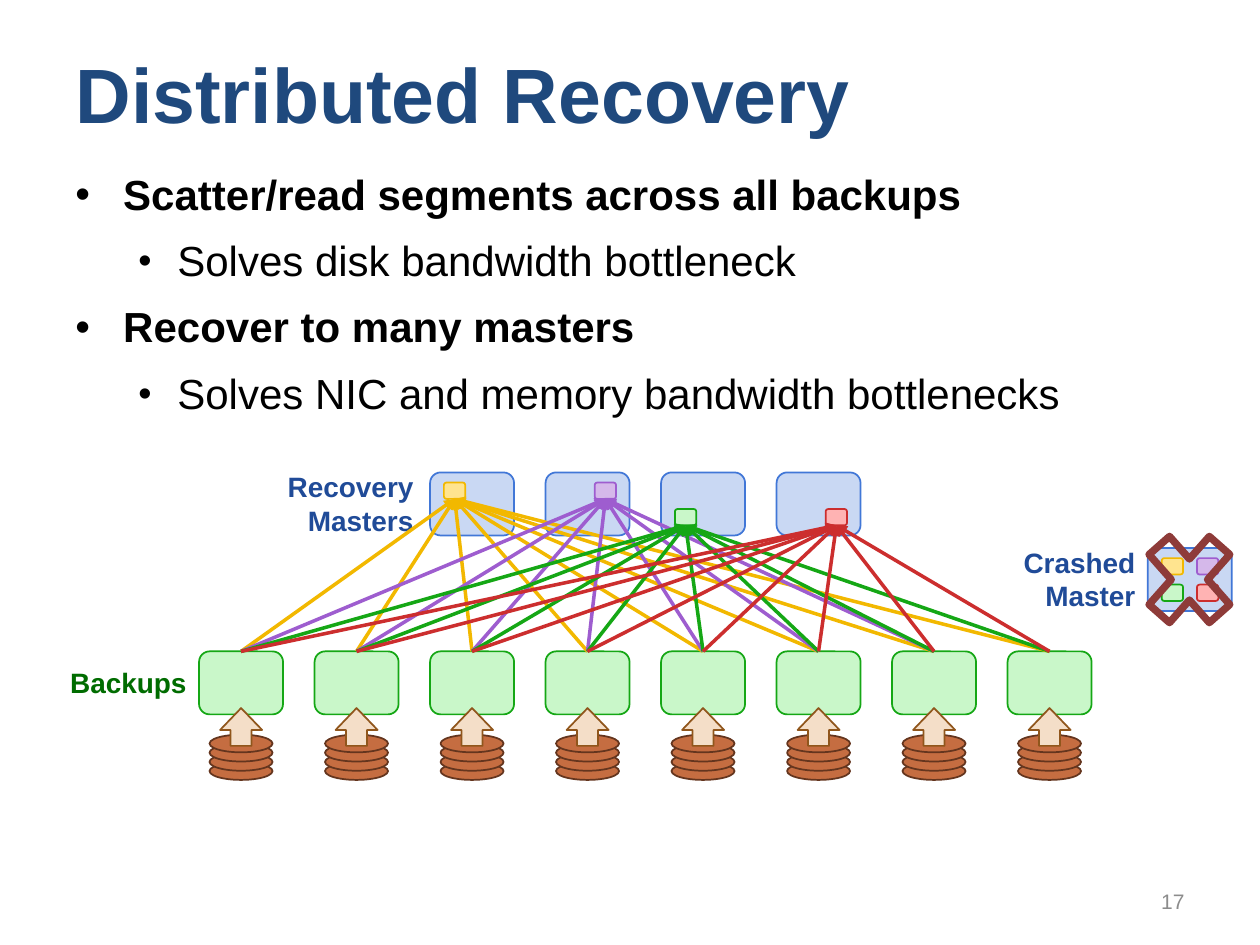
from pptx import Presentation
from pptx.dml.color import RGBColor
from pptx.enum.shapes import MSO_CONNECTOR, MSO_SHAPE
from pptx.enum.text import MSO_ANCHOR, MSO_AUTO_SIZE, PP_ALIGN
from pptx.oxml.ns import qn
from pptx.util import Inches, Pt
from lxml import etree

ROUND, OVAL = MSO_SHAPE.ROUNDED_RECTANGLE, MSO_SHAPE.OVAL
ARROW, CROSS = MSO_SHAPE.UP_ARROW, MSO_SHAPE.MATH_MULTIPLY
LEFT, RIGHT = PP_ALIGN.LEFT, PP_ALIGN.RIGHT
TOP, MIDDLE = MSO_ANCHOR.TOP, MSO_ANCHOR.MIDDLE

COL = 11 / 12                # pitch of the node grid
GRID_X = 1.58                # left edge of the first column
NODE_W, NODE_H = 2 / 3, 0.5
MASTER_Y, BACKUP_Y = 3.75, 5.17
BACKUPS = 8
TILE_W, TILE_H = 0.17, 0.13
BLUE = ("C9D8F3", "4177D7")
GREEN = ("C9F7C9", "15A715")
DISK = ("C56D41", "64351E")
READ = ("F4DEC8", "90561C")
NAVY = "204B98"
# fill, line, left and top inside a node, backups that send to it
TILES = [
    ("FFE48F", "F2B800", 0.11, 0.08, 8),
    ("D5B8EA", "9E5DCF", 0.39, 0.08, 7),
    (*GREEN, 0.11, 0.29, 8),
    ("FFB3B3", "CC2E2E", 0.39, 0.29, 8),
]
POINTS = [
    (0, "Scatter/read segments across all backups"),
    (1, "Solves disk bandwidth bottleneck"),
    (0, "Recover to many masters"),
    (1, "Solves NIC and memory bandwidth bottlenecks"),
]


def rgb(code):
    return RGBColor.from_string(code)


def col_x(i):
    return GRID_X + i * COL


def style(para, size, color, bold=False, align=LEFT):
    para.alignment = align
    for run in para.runs:
        font = run.font
        font.name, font.size, font.bold = "Arial", Pt(size), bold
        font.color.rgb = rgb(color)


def add_shape(home, kind, box, fill, line, width=1):
    shape = home.shapes.add_shape(kind, *map(Inches, box))
    shape.shadow.inherit = False
    if fill:
        shape.fill.solid()
        shape.fill.fore_color.rgb = rgb(fill)
    else:
        shape.fill.background()
    shape.line.color.rgb = rgb(line)
    shape.line.width = Pt(width)
    return shape


def add_text(home, box, text, size, color, bold=True, anchor=TOP, wrap=False):
    frame = home.shapes.add_textbox(*map(Inches, box)).text_frame
    frame.text = text
    frame.word_wrap = wrap
    frame.vertical_anchor = anchor
    if not wrap:
        frame.auto_size = MSO_AUTO_SIZE.SHAPE_TO_FIT_TEXT
    style(frame.paragraphs[0], size, color, bold, RIGHT)


def add_arrow(home, start, end, color):
    line = home.shapes.add_connector(
        MSO_CONNECTOR.STRAIGHT, *map(Inches, (*start, *end)))
    line.line.color.rgb = rgb(color)
    line.line.width = Pt(2)
    props = line.line._get_or_add_ln()
    etree.SubElement(props, qn("a:tailEnd"), type="triangle")
    etree.SubElement(props.getparent(), qn("a:effectLst"))


def add_title(slide, box, text):
    title = slide.shapes.title
    title.left, title.top, title.width, title.height = map(Inches, box)
    title.text_frame.text = text
    title.text_frame.vertical_anchor = MIDDLE
    style(title.text_frame.paragraphs[0], 44, "1F497D", True)


def add_points(slide, box):
    frame = slide.shapes.add_textbox(*map(Inches, box)).text_frame
    frame.word_wrap = True
    for i, (level, text) in enumerate(POINTS):
        para = frame.add_paragraph() if i else frame.paragraphs[0]
        para.text, para.level = text, level
        para.line_spacing = 0.9
        para.space_before = para.space_after = Pt(6)
        style(para, 24, "000000", level == 0)
        left, hang = ((0.38, 0.38), (0.81, 0.31))[level]
        props = para._p.get_or_add_pPr()
        props.set("marL", str(Inches(left)))
        props.set("indent", str(-Inches(hang)))
        etree.SubElement(props, qn("a:buSzPct"),
                         val=("100000", "90000")[level])
        etree.SubElement(props, qn("a:buFont"), typeface="Arial")
        etree.SubElement(props, qn("a:buChar"), char="•")


def add_node(home, x, y, tiles):
    """Place a master with its partition tiles."""
    add_shape(home, ROUND, (x, y, NODE_W, NODE_H), *BLUE)
    for fill, line, dx, dy, _ in tiles:
        add_shape(home, ROUND, (x + dx, y + dy, TILE_W, TILE_H), fill, line)


def add_backup(slide, x, y):
    """Place a backup with its disk stack and read arrow."""
    group = slide.shapes.add_group_shape()
    for k in range(4):
        add_shape(group, OVAL, (x + NODE_W / 8, y + 0.88 - k * 0.073,
                                NODE_W * 3 / 4, 0.14), *DISK)
    add_shape(group, ROUND, (x, y, NODE_W, NODE_H), *GREEN)
    arrow = add_shape(group, ARROW, (x + NODE_W / 4, y + 0.45,
                                     NODE_W / 2, 0.3), *READ)
    arrow.adjustments[0], arrow.adjustments[1] = 0.5, 0.58


def add_flows(slide, first):
    """Join the backups to the tile of each master, from column first on."""
    group = slide.shapes.add_group_shape()
    for i, (_, color, dx, dy, count) in enumerate(TILES):
        end = (col_x(first + i) + dx + TILE_W / 2, MASTER_Y + dy + TILE_H)
        for k in range(count):
            add_arrow(group, (col_x(k) + NODE_W / 2, BACKUP_Y), end, color)


def add_crash(slide, x, y):
    group = slide.shapes.add_group_shape()
    add_node(group, x, y, TILES)
    add_text(group, (x - 1.1, y - 0.07, 1.1, 0.64),
             "Crashed\vMaster", 16, NAVY)
    add_shape(slide, CROSS, (x - 0.13, y - 0.27, 0.92, 1.04),
              None, "8E3B39", 4.25)


def main():
    deck = Presentation()
    deck.slide_width, deck.slide_height = Inches(10), Inches(7.5)
    slide = deck.slides.add_slide(deck.slide_layouts[5])
    add_title(slide, (0.5, 0.3, 9, 0.87), "Distributed Recovery")
    add_points(slide, (0.5, 1.33, 9, 2.08))
    add_text(slide, (7.17, 6.95, 2.33, 0.4), "17", 12, "8C8C8C",
             False, MIDDLE, True)
    add_text(slide, (2.17, 3.68, 1.21, 0.64), "Recovery\vMasters", 16, NAVY)
    add_text(slide, (0.45, 5.23, 1.13, 0.37), "Backups", 16, "006C00")
    for i in range(BACKUPS):
        add_backup(slide, col_x(i), BACKUP_Y)
    first = (BACKUPS - len(TILES)) // 2
    for i, tile in enumerate(TILES):
        add_node(slide, col_x(first + i), MASTER_Y, [tile])
    add_flows(slide, first)
    add_crash(slide, 9.11, 4.35)
    deck.save("out.pptx")


if __name__ == "__main__":
    main()
